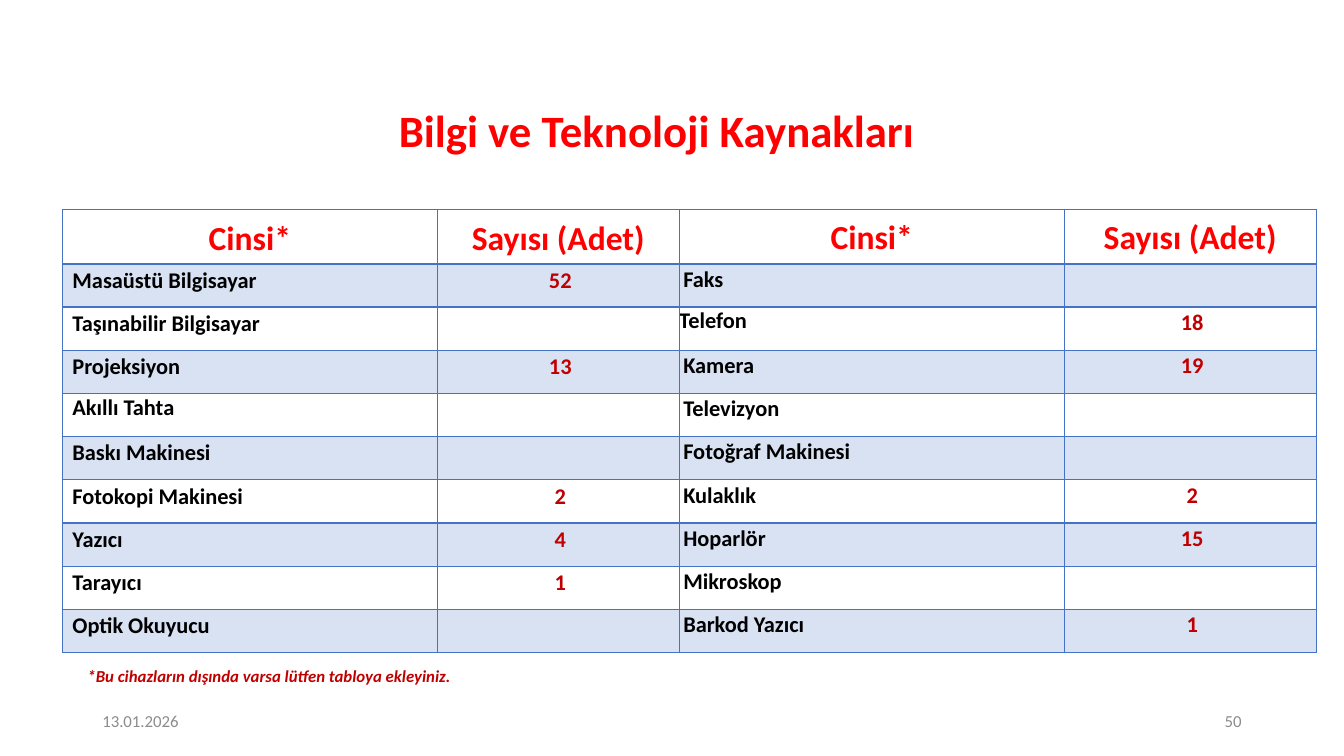
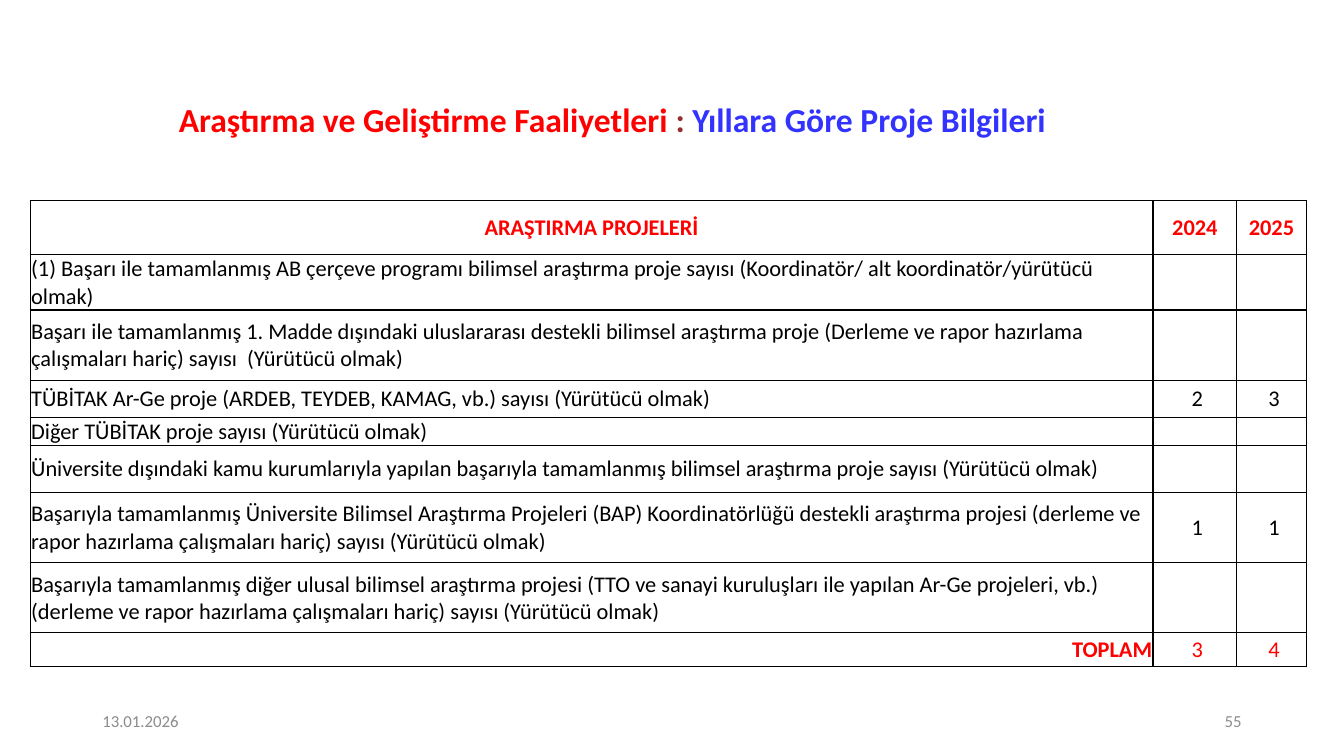
from lxml.etree import SubElement
from pptx import Presentation
from pptx.dml.color import RGBColor
from pptx.enum.text import MSO_ANCHOR, MSO_AUTO_SIZE, PP_ALIGN
from pptx.oxml import parse_xml
from pptx.oxml.ns import nsdecls, qn
from pptx.util import Pt

FONT = "Calibri"
COLORS = {
    "heading": "FF0000",
    "colon": "962E2E",
    "subject": "3333FF",
    "count": "C00000",
    "body": "000000",
    "footer": "8C8C8C",
    "accent": "4472C4",
}
DATE = "13.01.2026"

DEVICES = [
    ("Masaüstü Bilgisayar", "52", "Faks", ""),
    ("Taşınabilir Bilgisayar", "", "Telefon", "18"),
    ("Projeksiyon", "13", "Kamera", "19"),
    ("Akıllı Tahta", "", "Televizyon", ""),
    ("Baskı Makinesi", "", "Fotoğraf Makinesi", ""),
    ("Fotokopi Makinesi", "2", "Kulaklık", "2"),
    ("Yazıcı", "4", "Hoparlör", "15"),
    ("Tarayıcı", "1", "Mikroskop", ""),
    ("Optik Okuyucu", "", "Barkod Yazıcı", "1"),
]
TIGHT = {"spacing": 1.0, "after": 0}
DEVICE_EXCEPTIONS = {"Telefon": {**TIGHT, "indent": 0}, "Akıllı Tahta": TIGHT}

PROJECTS = [
    ("(1) Başarı ile tamamlanmış AB çerçeve programı bilimsel araştırma proje sayısı "
     "(Koordinatör/ alt koordinatör/yürütücü olmak)", "", ""),
    ("Başarı ile tamamlanmış 1. Madde dışındaki uluslararası destekli bilimsel araştırma proje "
     "(Derleme ve rapor hazırlama çalışmaları hariç) sayısı  (Yürütücü olmak)", "", ""),
    ("TÜBİTAK Ar-Ge proje (ARDEB, TEYDEB, KAMAG, vb.) sayısı (Yürütücü olmak)", " 2", " 3"),
    ("Diğer TÜBİTAK proje sayısı (Yürütücü olmak)", "", ""),
    ("Üniversite dışındaki kamu kurumlarıyla yapılan başarıyla tamamlanmış bilimsel araştırma "
     "proje sayısı (Yürütücü olmak)", "", ""),
    ("Başarıyla tamamlanmış Üniversite Bilimsel Araştırma Projeleri (BAP) Koordinatörlüğü "
     "destekli araştırma projesi (derleme ve rapor hazırlama çalışmaları hariç) sayısı "
     "(Yürütücü olmak)", " 1", " 1"),
    ("Başarıyla tamamlanmış diğer ulusal bilimsel araştırma projesi (TTO ve sanayi kuruluşları "
     "ile yapılan Ar-Ge projeleri, vb.) (derleme ve rapor hazırlama çalışmaları hariç) sayısı "
     "(Yürütücü olmak)", "", ""),
]


def write(paragraph, text, size=16, color="body", bold=False, italic=False,
          align=PP_ALIGN.LEFT, spacing=1.0, after=0, indent=0):
    paragraph.alignment = align
    paragraph.line_spacing = spacing
    paragraph.space_before = Pt(0)
    paragraph.space_after = Pt(after)
    paragraph._p.get_or_add_pPr().set("marL", str(Pt(indent)))
    if not text:
        SubElement(paragraph._p, qn("a:endParaRPr")).set("sz", str(size * 100))
        return
    run = paragraph.add_run()
    run.text = text
    run.font.name = FONT
    run.font.size = Pt(size)
    run.font.bold = bold
    run.font.italic = italic
    run.font.color.rgb = RGBColor.from_string(COLORS[color])


def add_label(slide, text, left, top, width, height, anchor=MSO_ANCHOR.MIDDLE, **style):
    label = slide.shapes.add_textbox(Pt(left), Pt(top), Pt(width), Pt(height))
    frame = label.text_frame
    frame.word_wrap = True
    frame.vertical_anchor = anchor
    write(frame.paragraphs[0], text, **style)
    return frame


def add_page(deck, number, title_box, title_parts, title_size):
    slide = deck.slides.add_slide(deck.slide_layouts[5])
    title = slide.shapes.title
    title.left, title.top, title.width, title.height = map(Pt, title_box)
    title.text_frame.word_wrap = True
    title.text_frame.auto_size = MSO_AUTO_SIZE.NONE
    title.text_frame.vertical_anchor = MSO_ANCHOR.MIDDLE
    for text, color in title_parts:
        write(title.text_frame.paragraphs[0], text, size=title_size, color=color,
              bold=True, align=PP_ALIGN.CENTER, spacing=0.9)
    footer = {"size": 12, "color": "footer"}
    add_label(slide, DATE, 66, 500.5, 216, 28.75, **footer)
    add_label(slide, number, 678, 500.5, 216, 28.75, align=PP_ALIGN.RIGHT, **footer)
    return slide


def add_grid(slide, left, top, widths, heights):
    frame = slide.shapes.add_table(len(heights), len(widths), Pt(left), Pt(top),
                                   Pt(sum(widths)), Pt(sum(heights)))
    grid = frame.table
    grid.first_row = False
    grid.horz_banding = False
    for column, width in zip(grid.columns, widths):
        column.width = Pt(width)
    for row, height in zip(grid.rows, heights):
        row.height = Pt(height)
    return grid


def set_borders(cell, color, top=1, bottom=1):
    sides = {"L": 1, "R": 1, "T": top, "B": bottom}
    for index, (side, width) in enumerate(sides.items()):
        cell._tc.get_or_add_tcPr().insert(index, parse_xml(
            f'<a:ln{side} {nsdecls("a")} w="{Pt(width)}"><a:solidFill>'
            f'<a:srgbClr val="{COLORS[color]}"/></a:solidFill></a:ln{side}>'))


def fill_cell(cell, text, insets, anchor=MSO_ANCHOR.MIDDLE, shaded=False, **style):
    (cell.margin_left, cell.margin_top,
     cell.margin_right, cell.margin_bottom) = map(Pt, insets)
    cell.vertical_anchor = anchor
    if shaded:
        cell.fill.solid()
        cell.fill.fore_color.rgb = RGBColor.from_string(COLORS["accent"])
        tint = cell._tc.tcPr.find(".//" + qn("a:srgbClr"))
        SubElement(tint, qn("a:alpha")).set("val", "20000")
    else:
        cell.fill.background()
    write(cell.text_frame.paragraphs[0], text, **style)


def add_device_table(slide):
    grid = add_grid(slide, 44.6, 149.8, [267.8, 172.8, 275, 180],
                    [38.7] + [30.85] * len(DEVICES))
    rows = [("Cinsi*", "Sayısı (Adet)") * 2] + DEVICES
    for r, row in enumerate(rows):
        for c, text in enumerate(row):
            is_count = c % 2 == 1
            style = {"bold": True, "spacing": 1.07, "after": 8}
            if r == 0:
                style.update(size=24, color="heading", align=PP_ALIGN.CENTER)
            else:
                style.update(indent=2.9, anchor=MSO_ANCHOR.TOP, shaded=r % 2 == 1)
                if is_count:
                    style.update(color="count", align=PP_ALIGN.CENTER)
            style.update(DEVICE_EXCEPTIONS.get(text, {}))
            insets = (4.3, 0.7, 4.3, 0) if c < 2 else (0, 0, 0, 0)
            fill_cell(grid.cell(r, c), text, insets, **style)
            set_borders(grid.cell(r, c), "accent", top=2 if r == 1 else 1,
                        bottom=2 if r == 0 else 1)


def add_project_table(slide):
    grid = add_grid(slide, 21.6, 143.2, [802, 59.8, 49.7],
                    [38.6, 39.6, 50.2, 26.4, 20, 33.7, 50.2, 50.2, 24.4])
    rows = [("ARAŞTIRMA PROJELERİ", "2024", "2025"), *PROJECTS, ("TOPLAM", " 3", " 4")]
    last = len(rows) - 1
    for r, row in enumerate(rows):
        for c, text in enumerate(row):
            if c > 0 or r == 0:
                align = PP_ALIGN.CENTER
            else:
                align = PP_ALIGN.RIGHT if r == last else PP_ALIGN.LEFT
            fill_cell(grid.cell(r, c), text, (0.7, 0.7, 0.7, 0), align=align,
                      color="heading" if r in (0, last) else "body",
                      bold=r == 0 or (r == last and c == 0))
            set_borders(grid.cell(r, c), "body")


def main():
    deck = Presentation()
    deck.slide_width, deck.slide_height = Pt(960), Pt(540)

    devices = add_page(deck, "50", (20.9, 68.4, 896.4, 52.6),
                       [("Bilgi ve Teknoloji Kaynakları", "heading")], 32)
    add_device_table(devices)
    footnote = add_label(devices, "*Bu cihazların dışında varsa lütfen tabloya ekleyiniz.",
                         55.4, 472.3, 360, 21.8, anchor=MSO_ANCHOR.TOP,
                         size=12, color="count", bold=True, italic=True)
    footnote.auto_size = MSO_AUTO_SIZE.SHAPE_TO_FIT_TEXT

    projects = add_page(deck, "55", (28.8, 64.1, 817.2, 46.1),
                        [("Araştırma ve Geliştirme Faaliyetleri ", "heading"),
                         (": ", "colon"),
                         ("Yıllara Göre Proje Bilgileri", "subject")], 24)
    add_project_table(projects)

    deck.save("out.pptx")


if __name__ == "__main__":
    main()
